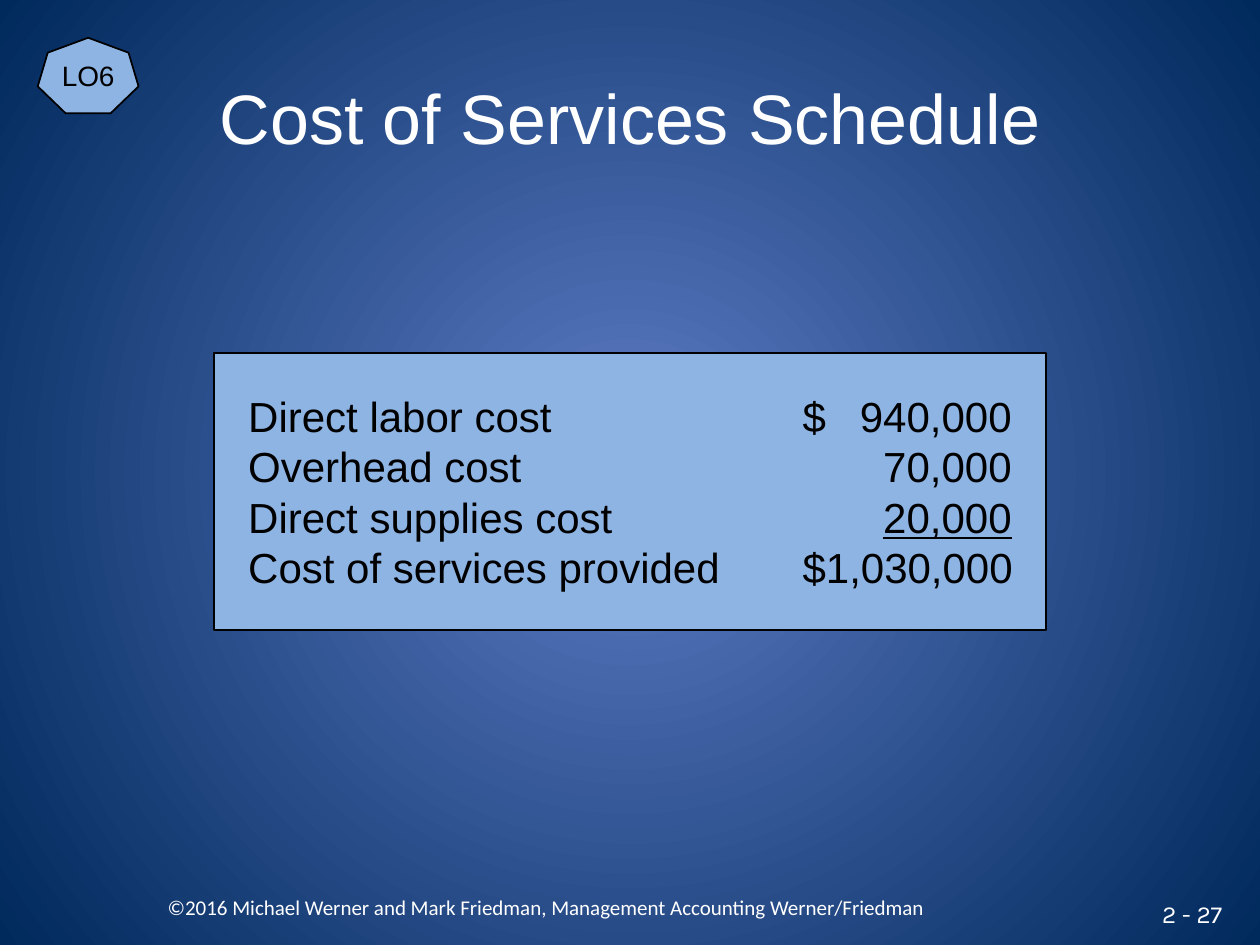
"""Build the cost of services schedule slide."""
import dataclasses

import lxml.etree
import pptx
import pptx.dml.color
import pptx.enum.shapes
import pptx.enum.text
import pptx.oxml.ns
import pptx.util

SHAPES = pptx.enum.shapes.MSO_SHAPE
ALIGN = pptx.enum.text.PP_ALIGN
MIDDLE = pptx.enum.text.MSO_ANCHOR.MIDDLE
COLUMNS, ROWS = 100, 75
WIDTH, HEIGHT = pptx.util.Inches(10), pptx.util.Inches(7.5)
INSET = 2.7
TAB_STOPS = (("l", 44), ("r", 60.6))
SCHEDULE = (
    ("Direct labor cost", "\t$\t940,000", False),
    ("Overhead cost", "\t\t70,000", False),
    ("Direct supplies cost", "\t20,000", True),
    ("Cost of services provided", "\t$1,030,000", False),
)


@dataclasses.dataclass(frozen=True)
class Theme:
    """Colours, fonts and type sizes of the slide."""
    glow: str = "5E7CC5"
    edge: str = "00295C"
    panel: str = "8EB4E3"
    ink: str = "000000"
    light: str = "FFFFFF"
    main_font: str = "Arial"
    footer_font: str = "Calibri"
    number_font: str = "Karla"
    title: int = 40
    body: int = 24
    badge: int = 16
    number: int = 14
    footer: int = 12


THEME = Theme()


def colour(code):
    """Turn a hex code into a colour."""
    return pptx.dml.color.RGBColor.from_string(code)


def across(columns):
    """Return the length of a number of grid columns."""
    return round(WIDTH * columns / COLUMNS)


def down(rows):
    """Return the length of a number of grid rows."""
    return round(HEIGHT * rows / ROWS)


def area(left, top, width, height):
    """Return a grid area as slide lengths."""
    return across(left), down(top), across(width), down(height)


def add_text(para, text, size, color=THEME.ink, font=THEME.main_font,
             align=ALIGN.CENTER, underline=None):
    """Append a formatted span to a paragraph."""
    para.alignment = align
    span = para.add_run()
    span.text = text
    span.font.size = pptx.util.Pt(size)
    span.font.name = font
    span.font.color.rgb = colour(color)
    span.font.underline = underline


def set_frame(box, wrap=True):
    """Centre the text of a box vertically and return its frame."""
    frame = box.text_frame
    frame.word_wrap = wrap
    frame.vertical_anchor = MIDDLE
    return frame


def paint_background(page):
    """Fill the page with a gradient that spreads from its centre."""
    fill = page.background.fill
    fill.gradient()
    for stop, code, position in zip(fill.gradient_stops, (THEME.glow, THEME.edge), (0, 1)):
        stop.color.rgb = colour(code)
        stop.position = position
    tag = pptx.oxml.ns.qn
    gradient = page._element.find(".//" + tag("a:gradFill"))
    gradient.remove(gradient.find(tag("a:lin")))
    spread = lxml.etree.SubElement(gradient, tag("a:path"), path="circle")
    lxml.etree.SubElement(spread, tag("a:fillToRect"),
                          {side: "50000" for side in "ltrb"})


def add_title(page, text):
    """Place and format the title."""
    box = page.shapes.title
    box.left, box.top, box.width, box.height = area(5, 3, 90, 12.5)
    add_text(set_frame(box).paragraphs[0], text, THEME.title, THEME.light)


def add_panel(page, kind, place):
    """Add an outlined blue shape."""
    box = page.shapes.add_shape(kind, *area(*place))
    box.shadow.inherit = False
    box.fill.solid()
    box.fill.fore_color.rgb = colour(THEME.panel)
    box.line.color.rgb = colour(THEME.ink)
    box.line.width = pptx.util.Pt(1)
    return box


def add_label(page, place, text, size, wrap=True, **style):
    """Add a text box with one line."""
    box = page.shapes.add_textbox(*area(*place))
    add_text(set_frame(box, wrap).paragraphs[0], text, size, THEME.light, **style)


def add_tab_stops(para):
    """Give a paragraph the stops of the amount column."""
    tag = pptx.oxml.ns.qn
    stops = lxml.etree.SubElement(para._p.get_or_add_pPr(), tag("a:tabLst"))
    for side, columns in TAB_STOPS:
        lxml.etree.SubElement(stops, tag("a:tab"), pos=str(across(columns)), algn=side)


def add_schedule(page):
    """Add the panel of costs, with the last addend underlined."""
    frame = set_frame(add_panel(page, SHAPES.RECTANGLE, (17, 28, 66, 22)))
    frame.margin_left, frame.margin_right = across(INSET), across(INSET / 2)
    for index, (label, amount, is_addend) in enumerate(SCHEDULE):
        para = frame.add_paragraph() if index else frame.paragraphs[0]
        add_tab_stops(para)
        if is_addend:
            label += "\t"
        add_text(para, label, THEME.body, align=ALIGN.LEFT)
        add_text(para, amount, THEME.body, align=ALIGN.LEFT, underline=is_addend or None)


def add_badge(page, text):
    """Add the learning objective badge."""
    frame = set_frame(add_panel(page, SHAPES.HEPTAGON, (3, 3, 8, 6)), wrap=False)
    frame.margin_left = frame.margin_right = frame.margin_top = frame.margin_bottom = 0
    add_text(frame.paragraphs[0], text, THEME.badge)


def main():
    """Build and save the deck."""
    deck = pptx.Presentation()
    deck.slide_width, deck.slide_height = WIDTH, HEIGHT
    page = deck.slides.add_slide(deck.slide_layouts.get_by_name("Title Only"))
    paint_background(page)
    add_label(page, (90, 71, 8, 3), "2 - 27", THEME.number, wrap=False,
              font=THEME.number_font, align=ALIGN.RIGHT)
    add_title(page, "Cost of Services Schedule")
    add_schedule(page)
    add_badge(page, "LO6")
    add_label(page, (4.2, 70, 78.3, 4),
              "©2016 Michael Werner and Mark Friedman, Management Accounting Werner/Friedman",
              THEME.footer, font=THEME.footer_font)
    deck.save("out.pptx")


if __name__ == "__main__":
    main()
